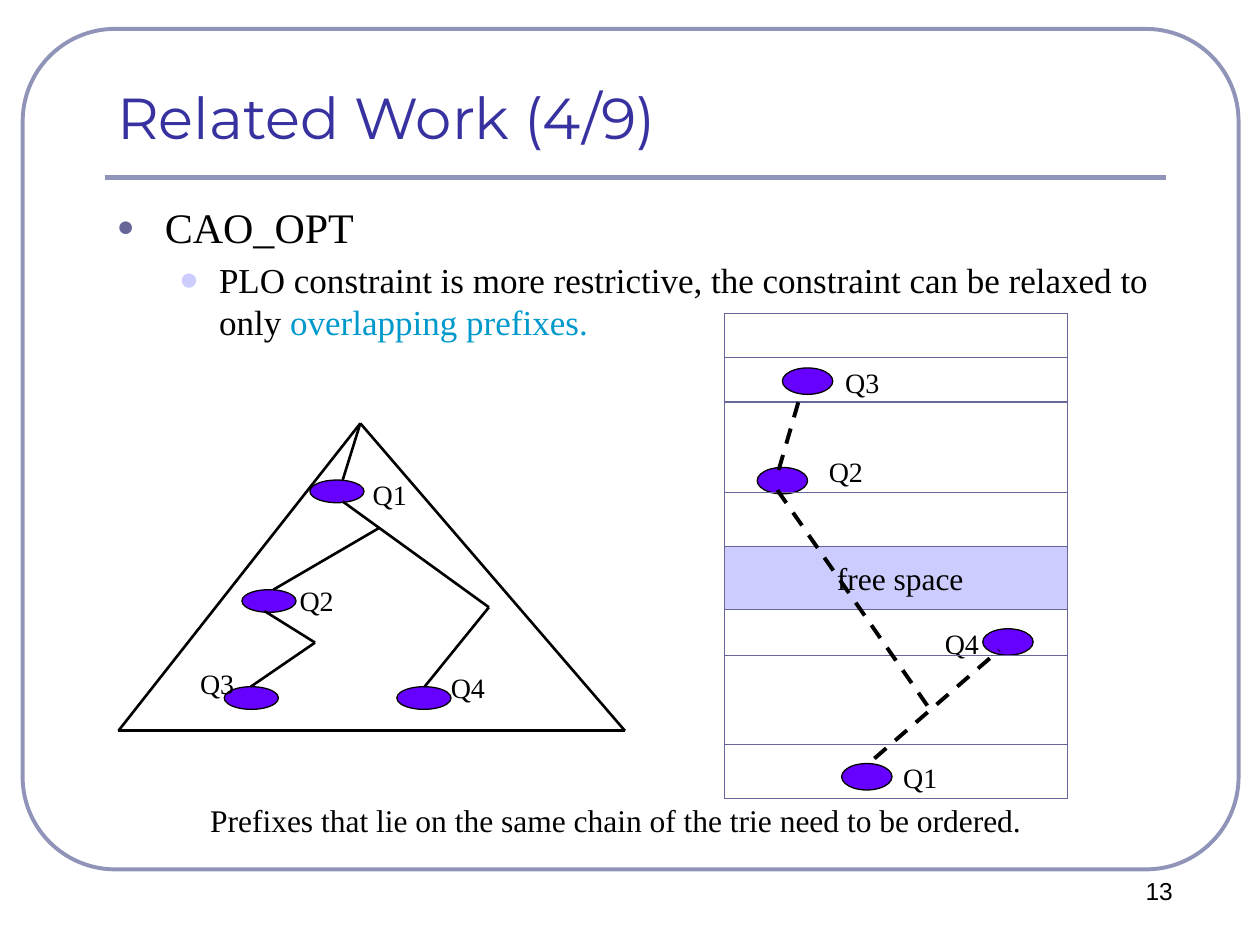
from lxml.etree import SubElement
from pptx import Presentation
from pptx.dml.color import RGBColor
from pptx.enum.dml import MSO_LINE_DASH_STYLE as DASH
from pptx.enum.shapes import MSO_CONNECTOR, MSO_SHAPE as SHAPE
from pptx.enum.text import MSO_ANCHOR as ANCHOR, PP_ALIGN as ALIGN
from pptx.oxml.ns import qn
from pptx.util import Pt

SCALE = 9144  # EMU per px, 100 px to the inch
SERIF = "Times New Roman"
BLACK, WHITE = "000000", "FFFFFF"
FRAME, GRID, NODE, PALE = "9094B8", "666699", "6600FF", "CCCCFF"


def px(*lengths):
    return [round(length * SCALE) for length in lengths]


def color(hex_text):
    return RGBColor.from_string(hex_text)


def add_run(paragraph, words, size, ink=BLACK, face=SERIF):
    run = paragraph.add_run()
    run.text = words
    run.font.size, run.font.name = Pt(size), face
    run.font.color.rgb = color(ink)


def add_text(slide, box, words, size, align=ALIGN.LEFT, face=SERIF, wrap=True):
    frame = slide.shapes.add_textbox(*px(*box)).text_frame
    frame.word_wrap = wrap
    paragraph = frame.paragraphs[0]
    paragraph.alignment = align
    add_run(paragraph, words, size, face=face)


def add_box(slide, kind, box, fill, ink, width=0.75):
    shape = slide.shapes.add_shape(kind, *px(*box))
    shape.shadow.inherit = False
    if fill:
        shape.fill.solid()
        shape.fill.fore_color.rgb = color(fill)
    else:
        shape.fill.background()
    shape.line.color.rgb = color(ink)
    shape.line.width = Pt(width)
    return shape


def add_line(slide, start, end, ink=BLACK, width=1.5, dash=None):
    line = slide.shapes.add_connector(MSO_CONNECTOR.STRAIGHT, *px(*start, *end))
    line.line.color.rgb = color(ink)
    line.line.width = Pt(width)
    if dash:
        line.line.dash_style = dash
    SubElement(line._element.spPr, qn("a:effectLst"))


def add_bullet(paragraph, mark, ink, percent, margin, hang):
    props = paragraph._p.get_or_add_pPr()
    left, indent = px(margin, -hang)
    props.set("marL", str(left))
    props.set("indent", str(indent))
    spacing = SubElement(props, qn("a:spcBef"))
    SubElement(spacing, qn("a:spcPct"), val="20000")
    bullet_color = SubElement(props, qn("a:buClr"))
    SubElement(bullet_color, qn("a:srgbClr"), val=ink)
    SubElement(props, qn("a:buSzPct"), val=str(percent * 1000))
    SubElement(props, qn("a:buFont"), typeface="Arial")
    SubElement(props, qn("a:buChar"), char=mark)


def add_nodes(slide, box, size, nodes):
    """Draw the prefixes: name, ellipse corner and label corner inside the box."""
    left, top = box[:2]
    for _, (x, y), _ in nodes:
        add_box(slide, SHAPE.OVAL, (left + x, top + y, *size), NODE, BLACK)
    for name, _, (x, y) in nodes:
        add_text(slide, (left + x, top + y, 47, 37), name, 16, wrap=False)


def draw_frame(slide, box):
    left, top, width, _ = box
    border = add_box(slide, SHAPE.ROUNDED_RECTANGLE, box, None, FRAME, 2.25)
    border.adjustments[0] = 0.11
    add_line(slide, (left + 65, top + 118), (left + width - 58, top + 118), FRAME, 3)


def write_title(slide, box):
    title = slide.shapes.title
    title.left, title.top, title.width, title.height = px(*box)
    frame = title.text_frame
    frame.vertical_anchor = ANCHOR.BOTTOM
    frame.word_wrap = True
    paragraph = frame.paragraphs[0]
    paragraph.alignment = ALIGN.LEFT
    add_run(paragraph, "Related Work (4/9)", 33, "3732A0", "Montserrat")


def write_body(slide, box):
    frame = slide.shapes.add_textbox(*px(*box)).text_frame
    frame.word_wrap = True
    topic = frame.paragraphs[0]
    add_bullet(topic, "●", GRID, 70, 38, 38)
    add_run(topic, "CAO_OPT", 24)
    detail = frame.add_paragraph()
    detail.level = 1
    add_bullet(detail, "•", PALE, 150, 81, 31)
    add_run(detail, "PLO constraint is more restrictive, the constraint "
                    "can be relaxed to only ", 20)
    add_run(detail, "overlapping prefixes.", 20, "0099CC")


def draw_memory(slide, box):
    left, top, width, _ = box
    add_box(slide, SHAPE.RECTANGLE, box, WHITE, GRID)
    add_nodes(slide, box, (40, 21), [
        ("Q1", (93, 357), (132, 350)),
        ("Q4", (205, 250), (165, 243)),
        ("Q2", (26, 122), (73, 107)),
        ("Q3", (46, 43), (86, 36)),
    ])
    # Row borders and the free block
    for y in (35, 70, 142, 271, 342):
        add_line(slide, (left, top + y), (left + width, top + y), GRID, 0.75)
    add_box(slide, SHAPE.RECTANGLE, (left, top + 185, width, 50), PALE, GRID)
    # Chain order
    for (x1, y1), (x2, y2) in [((119, 353), (218, 267)),
                               ((161, 311), (42, 140)),
                               ((43, 124), (61, 62))]:
        add_line(slide, (left + x1, top + y1), (left + x2, top + y2),
                 width=2.25, dash=DASH.DASH)
    add_text(slide, (left + 47, top + 190, 185, 40), "free space", 18, ALIGN.CENTER)


def draw_trie(slide, box):
    left, top, width, height = box
    add_nodes(slide, box, (43, 18), [
        ("Q4", (221, 209), (254, 191)),
        ("Q3", (84, 209), (55, 188)),
        ("Q2", (98, 132), (134, 122)),
        ("Q1", (152, 45), (192, 38)),
    ])
    apex = (192, 0)
    paths = [
        [apex, (0, height), (width, height), apex],  # outline
        [apex, (178, 45)],                           # root to Q1
        [(178, 62), (294, 146), (243, 209)],         # Q1 to Q4
        [(207, 83), (123, 132)],                     # branch to Q2
        [(116, 149), (156, 174), (105, 209)],        # Q2 to Q3
    ]
    for path_points in paths:
        for (x1, y1), (x2, y2) in zip(path_points, path_points[1:]):
            add_line(slide, (left + x1, top + y1), (left + x2, top + y2))


def main():
    deck = Presentation()
    deck.slide_width, deck.slide_height = px(1000, 750)
    slide = deck.slides.add_slide(deck.slide_layouts[5])
    draw_frame(slide, (18, 23, 965, 667))
    write_title(slide, (83, 60, 842, 65))
    write_body(slide, (83, 155, 842, 495))
    add_text(slide, (866, 690, 108, 50), "13", 14, ALIGN.CENTER, "Arial")
    add_text(slide, (157, 631, 720, 40),
             "Prefixes that lie on the same chain of the trie need to be ordered.", 18)
    draw_memory(slide, (575, 249, 272, 385))
    draw_trie(slide, (94, 336, 402, 244))
    deck.save("out.pptx")


if __name__ == "__main__":
    main()
